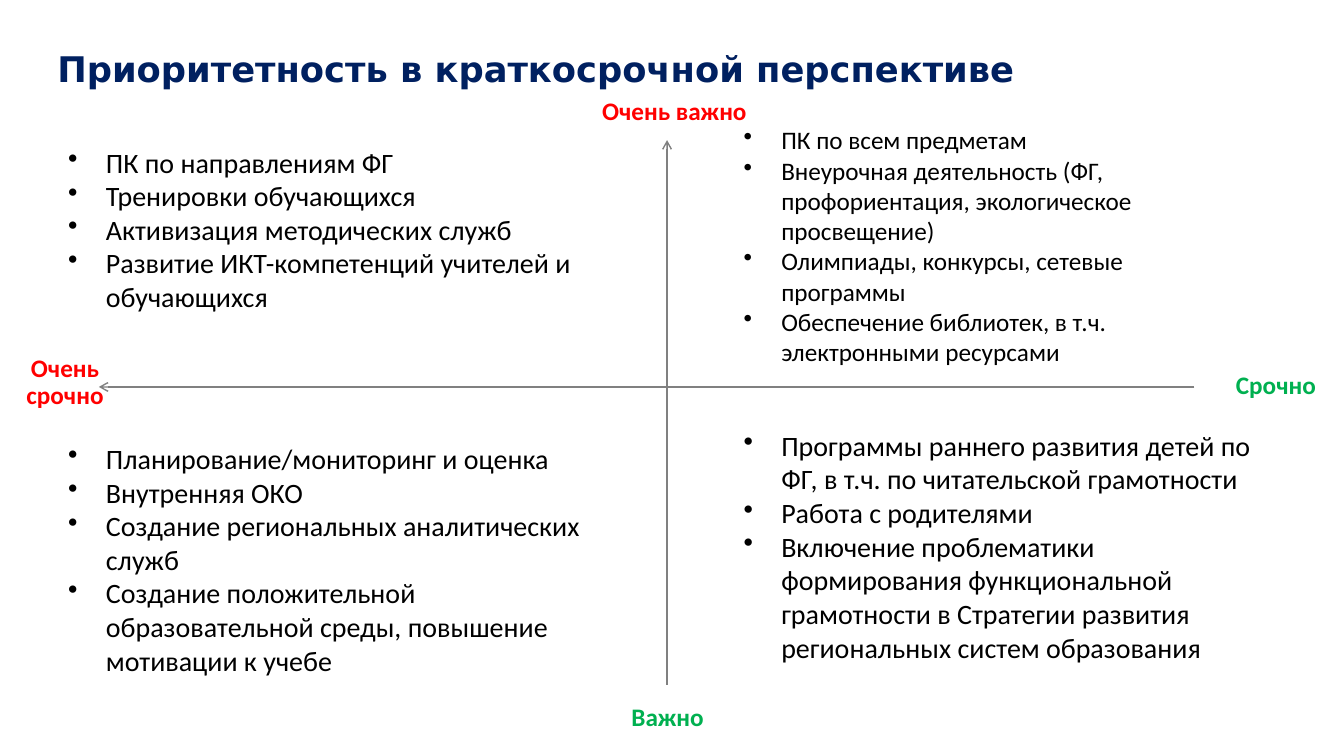
from lxml.etree import SubElement
from pptx import Presentation
from pptx.dml.color import RGBColor
from pptx.enum.shapes import MSO_CONNECTOR as Connector
from pptx.enum.text import MSO_ANCHOR as Anchor, MSO_AUTO_SIZE as AutoSize, PP_ALIGN as Align
from pptx.oxml.ns import qn
from pptx.util import Cm, Pt

NAVY = RGBColor(0x00, 0x20, 0x60)
RED = RGBColor(0xFF, 0x00, 0x00)
GREEN = RGBColor(0x00, 0xB0, 0x50)
GRAY = RGBColor(0x80, 0x80, 0x80)
BLACK = RGBColor(0x00, 0x00, 0x00)

LEFT_COLUMN, RIGHT_COLUMN = 1.47, 18.49
AXIS_X, AXIS_Y = 16.81, 9.75

LABELS = [
    ("Срочно", (30.35, 9.32, 3.61, 0.89), GREEN, 0.8),
    ("Очень срочно", (0.05, 8.84, 3.18, 1.85), RED, 0.9),
    ("Важно", (15.57, 17.63, 2.51, 0.99), GREEN, 0.9),
    ("Очень важно", (14.81, 2.36, 4.37, 0.89), RED, 0.9),
]

QUADRANTS = [
    ((LEFT_COLUMN, 3.53, 14.83, 4.52), 20, [
        "ПК по направлениям ФГ",
        "Тренировки обучающихся",
        "Активизация методических служб",
        "Развитие ИКТ-компетенций учителей и обучающихся",
    ]),
    ((RIGHT_COLUMN, 3.02, 13.13, 6.4), 18, [
        "ПК по всем предметам",
        "Внеурочная деятельность (ФГ, профориентация, экологическое просвещение)",
        "Олимпиады, конкурсы, сетевые программы",
        "Обеспечение библиотек, в т.ч. электронными ресурсами",
    ]),
    ((LEFT_COLUMN, 11, 14.58, 6.25), 20, [
        "Планирование/мониторинг и оценка",
        "Внутренняя ОКО",
        "Создание региональных аналитических служб",
        "Создание положительной образовательной среды, повышение мотивации к учебе",
    ]),
    ((RIGHT_COLUMN, 10.67, 13.49, 6.25), 20, [
        "Программы раннего развития детей по ФГ, в т.ч. по читательской грамотности",
        "Работа с родителями",
        "Включение проблематики формирования функциональной грамотности "
        "в Стратегии развития региональных систем образования",
    ]),
]


def write(paragraph, text, size=18, color=BLACK, font="Calibri", bold=False,
          align=Align.LEFT, spacing=None):
    """Put formatted text into a paragraph."""
    paragraph.alignment = align
    if spacing:
        paragraph.line_spacing = spacing
    run = paragraph.add_run()
    run.text = text
    run.font.size = Pt(size)
    run.font.name = font
    run.font.bold = bold
    run.font.color.rgb = color


class PrioritySlide:
    """Hold the slide and draw the elements of the priority matrix."""

    def __init__(self, slide, indent=0.95, line_width=1):
        """Keep the slide and its style."""
        self.slide = slide
        self.indent = indent
        self.line_width = line_width

    def title(self, text, box):
        """Place and format the title placeholder."""
        shape = self.slide.shapes.title
        shape.left, shape.top, shape.width, shape.height = map(Cm, box)
        frame = shape.text_frame
        frame.auto_size = AutoSize.NONE
        frame.vertical_anchor = Anchor.MIDDLE
        write(frame.paragraphs[0], text, size=25.2, color=NAVY,
              font="DejaVu Sans", bold=True, spacing=0.9)

    def text_frame(self, box):
        """Add a wrapping text box and return its frame."""
        frame = self.slide.shapes.add_textbox(*map(Cm, box)).text_frame
        frame.word_wrap = True
        return frame

    def label(self, text, box, color, spacing):
        """Add a bold label at the end of an axis."""
        write(self.text_frame(box).paragraphs[0], text, color=color, bold=True,
              align=Align.CENTER, spacing=spacing)

    def bullets(self, box, size, items):
        """Add a bulleted list."""
        frame = self.text_frame(box)
        for index, item in enumerate(items):
            paragraph = frame.add_paragraph() if index else frame.paragraphs[0]
            write(paragraph, item, size=size)
            properties = paragraph._p.get_or_add_pPr()
            properties.set("marL", str(Cm(self.indent)))
            properties.set("indent", str(-Cm(self.indent)))
            SubElement(properties, qn("a:buChar"), char="•")

    def axis(self, *ends):
        """Add an axis with an open arrowhead at its end."""
        line = self.slide.shapes.add_connector(Connector.STRAIGHT, *map(Cm, ends))
        line.line.color.rgb = GRAY
        line.line.width = Pt(self.line_width)
        SubElement(line.line._get_or_add_ln(), qn("a:tailEnd"), type="arrow")
        SubElement(line._element.spPr, qn("a:effectLst"))


def main():
    """Build and save the presentation."""
    presentation = Presentation()
    presentation.slide_width, presentation.slide_height = Cm(33.87), Cm(19.05)
    slide = presentation.slides.add_slide(presentation.slide_layouts[5])
    matrix = PrioritySlide(slide)
    matrix.title("Приоритетность в краткосрочной перспективе", (1.19, 1.19, 31.5, 1.19))
    matrix.axis(30.1, AXIS_Y, 2.49, AXIS_Y)
    matrix.axis(AXIS_X, 17.25, AXIS_X, 3.53)
    for label in LABELS:
        matrix.label(*label)
    for quadrant in QUADRANTS:
        matrix.bullets(*quadrant)
    presentation.save("out.pptx")


if __name__ == "__main__":
    main()
